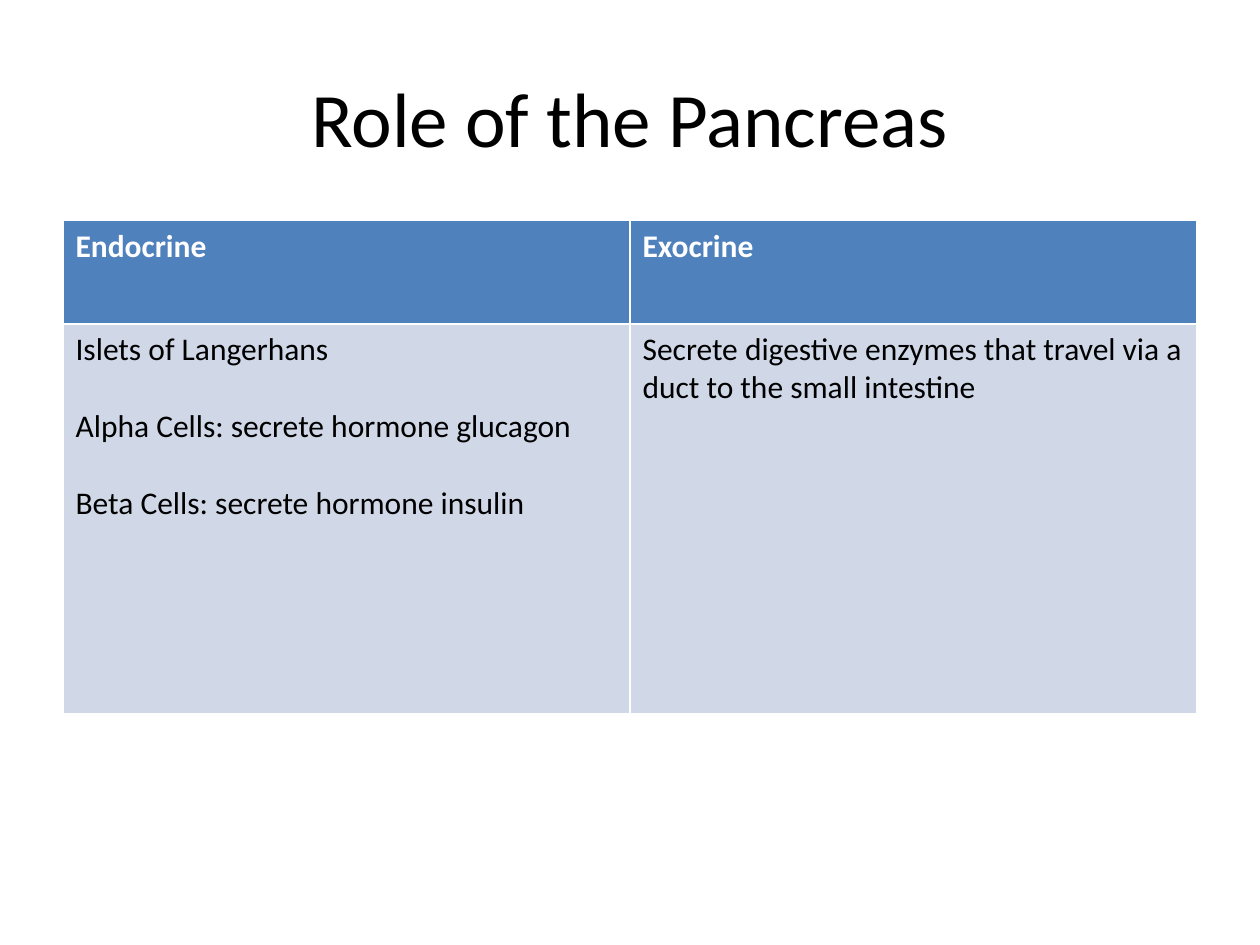
from pptx import Presentation
from pptx.dml.color import RGBColor
from pptx.enum.text import MSO_ANCHOR, PP_ALIGN
from pptx.util import Cm, Pt

TITLE = "Role of the Pancreas"
COLUMNS = [
    ("Endocrine", ["Islets of Langerhans",
                   "Alpha Cells: secrete hormone glucagon",
                   "Beta Cells: secrete hormone insulin"]),
    ("Exocrine", ["Secrete digestive enzymes that travel via a duct "
                  "to the small intestine"]),
]

FONT = "Calibri"
BLACK = RGBColor(0x00, 0x00, 0x00)
WHITE = RGBColor(0xFF, 0xFF, 0xFF)
HEADER_BLUE = RGBColor(0x4F, 0x81, 0xBD)
BODY_BLUE = RGBColor(0xD0, 0xD8, 0xE8)

LEFT, WIDTH = Cm(1.27), Cm(22.86)
TITLE_TOP, TITLE_HEIGHT = Cm(0.76), Cm(3.18)
TABLE_TOP = Cm(4.45)
ROW_HEIGHTS = [Cm(2.08), Cm(7.85)]
PARAGRAPH_GAP = Pt(22)


def write(frame, lines, size=18, color=BLACK, bold=False, align=PP_ALIGN.LEFT):
    for index, line in enumerate(lines):
        paragraph = frame.add_paragraph() if index else frame.paragraphs[0]
        paragraph.alignment = align
        if index:
            paragraph.space_before = PARAGRAPH_GAP
        run = paragraph.add_run()
        run.text = line
        run.font.name = FONT
        run.font.size = Pt(size)
        run.font.bold = bold
        run.font.color.rgb = color


def fill_cell(cell, lines, background, **text_format):
    cell.fill.solid()
    cell.fill.fore_color.rgb = background
    write(cell.text_frame, lines, **text_format)


def main():
    deck = Presentation()
    deck.slide_width, deck.slide_height = Cm(25.4), Cm(19.05)
    slide = deck.slides.add_slide(deck.slide_layouts.get_by_name("Title Only"))

    title = slide.shapes.title
    title.left, title.top = LEFT, TITLE_TOP
    title.width, title.height = WIDTH, TITLE_HEIGHT
    title.text_frame.vertical_anchor = MSO_ANCHOR.MIDDLE
    write(title.text_frame, [TITLE], size=44, align=PP_ALIGN.CENTER)

    # The default table style supplies the white rules between cells.
    table = slide.shapes.add_table(len(ROW_HEIGHTS), len(COLUMNS), LEFT, TABLE_TOP,
                                   WIDTH, sum(ROW_HEIGHTS)).table
    for row, height in zip(table.rows, ROW_HEIGHTS):
        row.height = height
    for index, (heading, details) in enumerate(COLUMNS):
        fill_cell(table.cell(0, index), [heading], HEADER_BLUE, color=WHITE, bold=True)
        fill_cell(table.cell(1, index), details, BODY_BLUE)

    deck.save("out.pptx")


if __name__ == "__main__":
    main()
